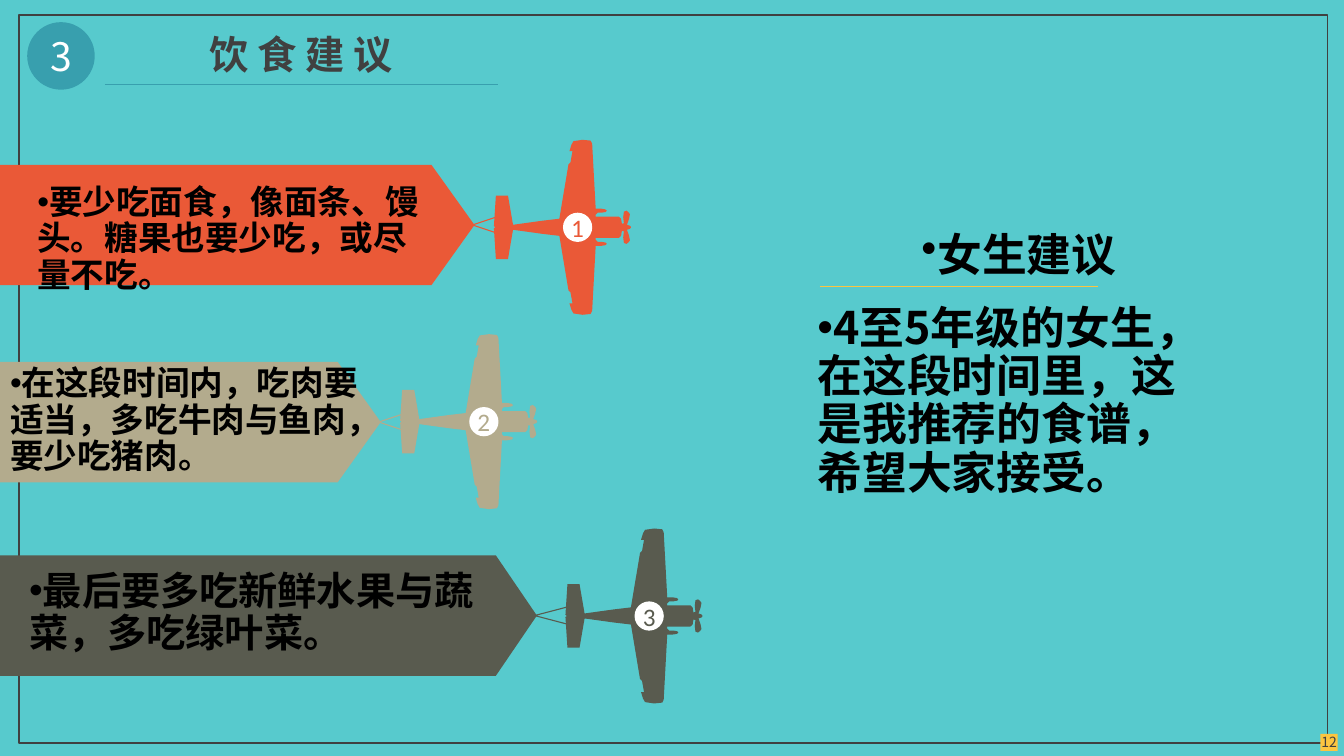
from lxml import etree
from pptx import Presentation
from pptx import util as u
from pptx.dml.color import RGBColor
from pptx.enum import shapes, text
from pptx.oxml.ns import qn

SANS, CJK, LATIN = "Noto Sans CJK SC", "Noto Sans CJK JP", "Calibri"
INK, TEAL, GOLD, BLACK, WHITE = "404040", "389FAE", "FDC540", "000000", "FFFFFF"

# Upper half of the plane: grid cells from the tail, and up from its axis
HALF = [(.1, .05), (0, .1), (.2, 3.15), (1.4, 3.15), (1.9, .25), (4.8, .65),
        (6.5, .85), (7.4, 6.25), (7.6, 6.45), (7.8, 7.55), (7.5, 7.55),
        (7.7, 8.2), (7.9, 8.55), (8.8, 8.68), (9.6, 8.6), (9.75, 8.3),
        (10.1, 1.85), (10.6, 1.85), (11.05, 1.78), (11.2, 1.65),
        (11.1, 1.52), (10.7, 1.45), (10.3, 1.45), (10.1, 1.25), (10.1, 1.05),
        (12.4, 1.05), (12.62, .85), (12.7, .35), (12.9, .4), (12.83, 1),
        (12.9, 1.55), (13.15, 1.65), (13.35, 1.5), (13.5, 1.3), (13.4, .8),
        (13.2, .25), (13.5, .15), (13.6, .03)]


def color(code):
    return RGBColor.from_string(code)


class Deck:
    """Holds the style and the slide; the grid has ten cells to the inch."""

    def __init__(self, wide, high, back):
        self.prs = Presentation()
        self.prs.slide_width = self.cell(wide)
        self.prs.slide_height = self.cell(high)
        # Comparison layout: a title and four bodies
        self.slide = self.prs.slides.add_slide(self.prs.slide_layouts[4])
        fill = self.slide.background.fill
        fill.solid()
        fill.fore_color.rgb = color(back)

    def cell(self, n):
        return u.Inches(n / 10)

    def box(self, *box):
        return [self.cell(n) for n in box]

    def paint(self, item, fill=None, line=None):
        item.shadow.inherit = False
        if fill:
            item.fill.solid()
            item.fill.fore_color.rgb = color(fill)
        else:
            item.fill.background()
        if line:
            item.line.color.rgb = color(line)
            item.line.width = u.Pt(1)
        else:
            item.line.fill.background()

    def shape(self, kind, box, fill=None, line=None):
        item = self.slide.shapes.add_shape(kind, *self.box(*box))
        self.paint(item, fill, line)
        return item

    def outline(self, dots, fill):
        dots = [self.box(*dot) for dot in dots]
        pen = self.slide.shapes.build_freeform(*dots[0], scale=1.0)
        pen.add_line_segments(dots[1:], close=True)
        self.paint(pen.convert_to_shape(), fill)

    def rule(self, left, right, top, line):
        item = self.slide.shapes.add_connector(
            shapes.MSO_CONNECTOR.STRAIGHT, *self.box(left, top, right, top))
        item.line.color.rgb = color(line)
        item.line.width = u.Pt(.5)
        etree.SubElement(item._element.spPr, qn("a:effectLst"))

    def label(self, item, words, size, font, ink, bold=False, mid=True):
        para = item.text_frame.paragraphs[0]
        para.alignment = text.PP_ALIGN.CENTER if mid else text.PP_ALIGN.LEFT
        run = para.add_run()
        run.text = words
        face = run.font
        face.size, face.name, face.bold = u.Pt(size), font, bold
        face.color.rgb = color(ink)
        east = etree.SubElement(run._r.get_or_add_rPr(), qn("a:ea"))
        east.set("typeface", font)
        return para

    def badge(self, kind, box, fill, words, size, font, ink):
        item = self.shape(kind, box, fill)
        frame = item.text_frame
        frame.margin_left = frame.margin_right = 0
        frame.margin_top = frame.margin_bottom = 0
        frame.word_wrap = False
        frame.vertical_anchor = text.MSO_ANCHOR.MIDDLE
        self.label(item, words, size, font, ink)

    def place(self, item, box, wrap):
        item.left, item.top, item.width, item.height = self.box(*box)
        frame = item.text_frame
        frame.word_wrap = wrap
        frame.auto_size = text.MSO_AUTO_SIZE.NONE
        frame.vertical_anchor = text.MSO_ANCHOR.TOP
        # Bring the text in front of what is drawn so far
        self.slide.shapes._spTree.append(item._element)

    def title(self, words, box):
        item = self.slide.shapes.title
        self.place(item, box, False)
        self.label(item, words, 28, CJK, INK, True)

    def list(self, item, words, box, size, gap=10, mid=False):
        self.place(item, box, not mid)
        para = self.label(item, words, size, CJK, BLACK, True, mid)
        para.line_spacing = .9
        para.space_before = u.Pt(gap)
        props = para._p.get_or_add_pPr()
        props.set("marL", "0")
        props.set("indent", "0")
        etree.SubElement(props, qn("a:buChar")).set("char", "•")

    def body(self, spot):
        return self.slide.placeholders[spot]

    def plane(self, mark, fill, tail, axis, edge, tip, top):
        low = [(x, -y) for x, y in reversed(HALF)]
        self.outline([(tail + x, axis - y) for x, y in HALF + low], fill)
        # Banner with two tow ropes
        mid, knot = top + 5.97, tail + 1.35
        self.outline([(knot, mid - 1.1), (knot - .05, mid - 1.2),
                      (tip, mid - .1), (edge, top), (0, top),
                      (0, top + 11.94), (edge, top + 11.94), (tip, mid + .1),
                      (knot - .05, mid + 1.2), (knot, mid + 1.1),
                      (tip + .05, mid)], fill)
        self.badge(shapes.MSO_SHAPE.OVAL, (tail + 6.85, axis - 1.45, 2.9, 2.9),
                   WHITE, mark, 18, LATIN, fill)


def main():
    deck = Deck(133.33, 75, "57CACD")
    kinds = shapes.MSO_SHAPE

    # Frame and heading
    deck.shape(kinds.RECTANGLE, (1.9, 1.5, 129.8, 72.2), line=INK)
    deck.title("饮 食 建 议", (18.3, 2.5, 23.1, 5.7))
    deck.badge(kinds.OVAL, (2.7, 2.2, 6.7, 6.7), TEAL, "3", 28, SANS, WHITE)
    deck.rule(10.4, 49.4, 8.4, TEAL)

    # Page number
    deck.badge(kinds.RECTANGLE, (131, 72.8, 1.7, 1.7), GOLD, "12", 10, SANS, INK)

    # Planes towing the advice: colour, tail, edge, tip, top, words, box, size
    rows = [
        ("EA5937", 49, 42.8, 47, 16.35,
         "要少吃面食，像面条、馒头。糖果也要少吃，或尽量不吃。",
         (2.7, 17.9, 40.9, 10.6), 24),
        ("B3AB8D", 39.7, 33.5, 37.7, 35.9,
         "在这段时间内，吃肉要适当，多吃牛肉与鱼肉，要少吃猪肉。",
         (0, 35.9, 37.2, 6.4), 24),
        ("595B4F", 56.1, 49.2, 53.2, 55.1,
         "最后要多吃新鲜水果与蔬菜，多吃绿叶菜。",
         (1.9, 56.2, 47.5, 6.4), 28)]
    for i, (fill, tail, edge, tip, top, words, box, size) in enumerate(rows):
        deck.plane(str(i + 1), fill, tail, 22.55 + 19.28 * i, edge, tip, top)
        deck.list(deck.body(i + 1), words, box, size)

    # Advice for girls
    box = (90.4, 22.6, 21.4, 5.8)
    head = deck.slide.shapes.add_textbox(*deck.box(*box))
    deck.list(head, "女生建议", box, 32, mid=True)
    deck.list(deck.body(4), "4至5年级的女生，在这段时间里，这是我推荐的食谱，希望大家接受。",
              (80.1, 29.8, 41.9, 20.4), 32, gap=0)
    deck.rule(81.3, 108.9, 28.4, GOLD)

    deck.prs.save("out.pptx")


if __name__ == "__main__":
    main()
